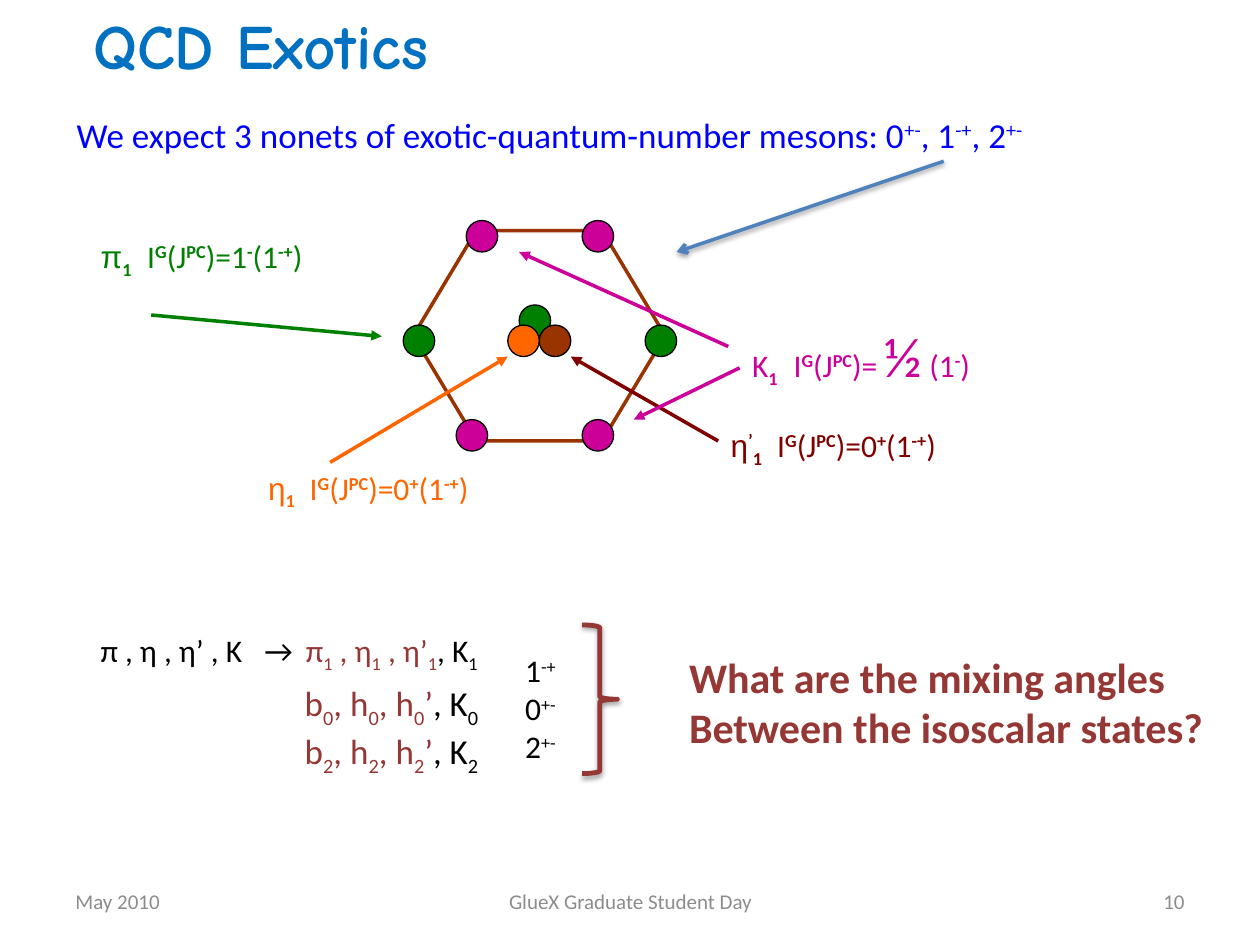
from dataclasses import dataclass

import lxml.etree
import pptx
import pptx.dml.color
import pptx.enum.shapes
import pptx.enum.text
import pptx.oxml.ns
import pptx.util

Inches = pptx.util.Inches
Pt = pptx.util.Pt
qn = pptx.oxml.ns.qn
ALIGN = pptx.enum.text.PP_ALIGN
ANCHOR = pptx.enum.text.MSO_ANCHOR
SHAPE = pptx.enum.shapes.MSO_SHAPE

BLACK, GREY, RED = "000000", "8C8C8C", "953735"
GREEN, MAROON, ORANGE, MAGENTA, BROWN = "008000", "800000", "FF6600", "CC0099", "993300"
SCRIPT_BASELINES = {"_": "-25000", "^": "30000"}


@dataclass
class Segment:
    """Text whose runs are parted by "|"; a leading _ or ^ lowers or raises a run."""
    markup: str
    color: str
    size: float = 18
    font: str = "Calibri"
    bold: bool = False
    bold_scripts: bool = False


@dataclass
class Block:
    left: float
    top: float
    width: float
    height: float
    lines: list[list[Segment]]
    align: ALIGN = ALIGN.LEFT
    wrap: bool = False
    tabs: tuple[float, ...] = ()


@dataclass
class Meson:
    left: float
    top: float
    color: str


@dataclass
class Arrow:
    start: tuple[float, float]
    end: tuple[float, float]
    color: str
    head: str = "triangle"
    shadow: bool = False


def rgb(color: str) -> pptx.dml.color.RGBColor:
    return pptx.dml.color.RGBColor.from_string(color)


def add_segment(paragraph, segment: Segment) -> None:
    for piece in segment.markup.split("|"):
        baseline = SCRIPT_BASELINES.get(piece[0])
        run = paragraph.add_run()
        run.text = piece[1:] if baseline else piece
        run.font.name = segment.font
        run.font.size = Pt(segment.size)
        run.font.bold = segment.bold or bool(baseline and segment.bold_scripts)
        run.font.color.rgb = rgb(segment.color)
        if baseline:
            run.font._element.set("baseline", baseline)


def add_block(slide, block: Block, grow: bool = True):
    box = slide.shapes.add_textbox(Inches(block.left), Inches(block.top),
                                   Inches(block.width), Inches(block.height))
    frame = box.text_frame
    frame.word_wrap = block.wrap
    if grow:
        frame.auto_size = pptx.enum.text.MSO_AUTO_SIZE.SHAPE_TO_FIT_TEXT
    for index, line in enumerate(block.lines):
        paragraph = frame.add_paragraph() if index else frame.paragraphs[0]
        paragraph.alignment = block.align
        if block.tabs:
            tab_list = lxml.etree.SubElement(paragraph._p.get_or_add_pPr(), qn("a:tabLst"))
            for stop in block.tabs:
                lxml.etree.SubElement(tab_list, qn("a:tab"), pos=str(Inches(stop)), algn="l")
        for segment in line:
            add_segment(paragraph, segment)
    return frame


def add_effects(shape, shadow: bool) -> None:
    """Replace the theme effect with a soft downward shadow or with none."""
    effects = lxml.etree.SubElement(shape._element.spPr, qn("a:effectLst"))
    if shadow:
        outer = lxml.etree.SubElement(effects, qn("a:outerShdw"), blurRad=str(Pt(3.1)),
                                      dist=str(Pt(1.6)), dir="5400000", rotWithShape="0")
        tint = lxml.etree.SubElement(outer, qn("a:srgbClr"), val=BLACK)
        lxml.etree.SubElement(tint, qn("a:alpha"), val="38000")


def add_outline(slide, kind: SHAPE, left: float, top: float, width: float, height: float,
                line: str, weight: float, fill: str = "", shadow: bool = False):
    shape = slide.shapes.add_shape(kind, Inches(left), Inches(top), Inches(width), Inches(height))
    if fill:
        shape.fill.solid()
        shape.fill.fore_color.rgb = rgb(fill)
    else:
        shape.fill.background()
    shape.line.color.rgb = rgb(line)
    shape.line.width = Pt(weight)
    add_effects(shape, shadow)
    return shape


def add_arrow(slide, arrow: Arrow) -> None:
    connector = slide.shapes.add_connector(
        pptx.enum.shapes.MSO_CONNECTOR.STRAIGHT, *map(Inches, arrow.start + arrow.end))
    connector.line.color.rgb = rgb(arrow.color)
    connector.line.width = Pt(2)
    lxml.etree.SubElement(connector.line._get_or_add_ln(), qn("a:tailEnd"), type=arrow.head)
    add_effects(connector, arrow.shadow)


def state(left: float, top: float, width: float, gap: float, color: str,
          symbol: str, index: str, numbers: str) -> Block:
    """Label of a meson state with its quantum numbers."""
    return Block(left, top, width, 0.5, [[
        Segment(symbol, color, font="Calibri" if symbol == "K" else "Arial"),
        Segment(f"{index}|\tI|^G|(J|^PC|{numbers}", color, bold_scripts=True),
    ]], wrap=True, tabs=(gap,))


def multiplet(spin: int) -> list[Segment]:
    return [Segment(f"b|_{spin}|, h|_{spin}|, h|_{spin}|’", RED, 20),
            Segment(f", K|_{spin}", BLACK, 20)]


FOOTERS = [
    Block(0.5, 6.95, 2.33, 0.4, [[Segment("May 2010", GREY, 12)]], wrap=True),
    Block(3.42, 6.95, 3.17, 0.4, [[Segment("GlueX Graduate Student Day", GREY, 12)]],
          ALIGN.CENTER, True),
    Block(7.17, 6.95, 2.33, 0.4, [[Segment("10", GREY, 12)]], ALIGN.RIGHT, True),
]

kaon = state(5.87, 2.5, 2.98, 0.33, MAGENTA, "K", "_1", ")= ")
kaon.height = 0.63
kaon.lines[0] += [Segment("½", MAGENTA, 32), Segment(" (1|^-|)", MAGENTA, bold_scripts=True)]

BLOCKS = [
    Block(0, 0, 4.14, 0.71, [[Segment("QCD Exotics", "0070C0", 36, "Comic Neue", True)]],
          ALIGN.CENTER, True),
    Block(0.51, 0.85, 7.83, 0.44, [[Segment(
        "We expect 3 nonets of exotic-quantum-number mesons: 0|^+-|, 1|^-+|, 2|^+-",
        "0000FF", 20)]]),
    state(0.7, 1.83, 2.89, 0.37, GREEN, "π", "_1", ")=1|^-|(1|^-+|)"),
    state(5.7, 3.33, 3.11, 0.37, MAROON, "η", "^’|_1", ")=0|^+|(1|^-+|)"),
    state(2.03, 3.67, 3.06, 0.33, ORANGE, "η", "_1", ")=0|^+|(1|^-+|)"),
    kaon,
    Block(0.7, 4.96, 3.27, 0.4, [[
        Segment("π , η , η’ , K\t→\t", BLACK),
        Segment("π|_1| , η|_1| , η’|_1", RED),
        Segment(", K|_1", BLACK)]], tabs=(1.3, 1.63)),
    Block(2.32, 5.36, 1.61, 0.77, [multiplet(0), multiplet(2)]),
    Block(4.07, 5.12, 0.47, 1.01,
          [[Segment(parity, BLACK)] for parity in ("1|^-+", "0|^+-", "2|^+-")]),
    Block(5.37, 5.12, 4.32, 0.91,
          [[Segment(line, RED, 24, bold=True)]
           for line in ("What are the mixing angles", "Between the isoscalar states?")]),
]

MESONS = [
    Meson(4.62, 3.33, MAGENTA), Meson(3.2, 2.58, GREEN), Meson(4.12, 2.42, GREEN),
    Meson(5.12, 2.58, GREEN), Meson(4.28, 2.58, BROWN), Meson(4.03, 2.58, ORANGE),
    Meson(3.7, 1.75, MAGENTA), Meson(4.62, 1.75, MAGENTA), Meson(3.62, 3.33, MAGENTA),
]

ARROWS = [
    Arrow((5.7, 3.5), (4.53, 2.83), MAROON),
    Arrow((2.62, 3.67), (4.03, 2.83), ORANGE),
    Arrow((5.87, 2.92), (5.03, 3.33), MAGENTA),
    Arrow((5.78, 2.75), (4.12, 2), MAGENTA),
    Arrow((1.2, 2.5), (3.03, 2.67), GREEN),
    Arrow((7.49, 1.28), (5.37, 2), "4F81BD", "arrow", True),
]


def main() -> None:
    deck = pptx.Presentation()
    deck.slide_width, deck.slide_height = Inches(10), Inches(7.5)
    slide = deck.slides.add_slide(deck.slide_layouts[6])
    for footer in FOOTERS:
        add_block(slide, footer, grow=False).vertical_anchor = ANCHOR.MIDDLE
    nonet = add_outline(slide, SHAPE.HEXAGON, 3.28, 1.83, 2, 1.67, BROWN, 2)
    nonet.adjustments[0] = 0.3
    for meson in MESONS:
        add_outline(slide, SHAPE.OVAL, meson.left, meson.top, 0.25, 0.25, BLACK, 0.75, meson.color)
    for block in BLOCKS:
        add_block(slide, block)
    for arrow in ARROWS:
        add_arrow(slide, arrow)
    add_outline(slide, SHAPE.RIGHT_BRACE, 4.62, 4.96, 0.28, 1.18, RED, 2.75, shadow=True)
    deck.save("out.pptx")


if __name__ == "__main__":
    main()
